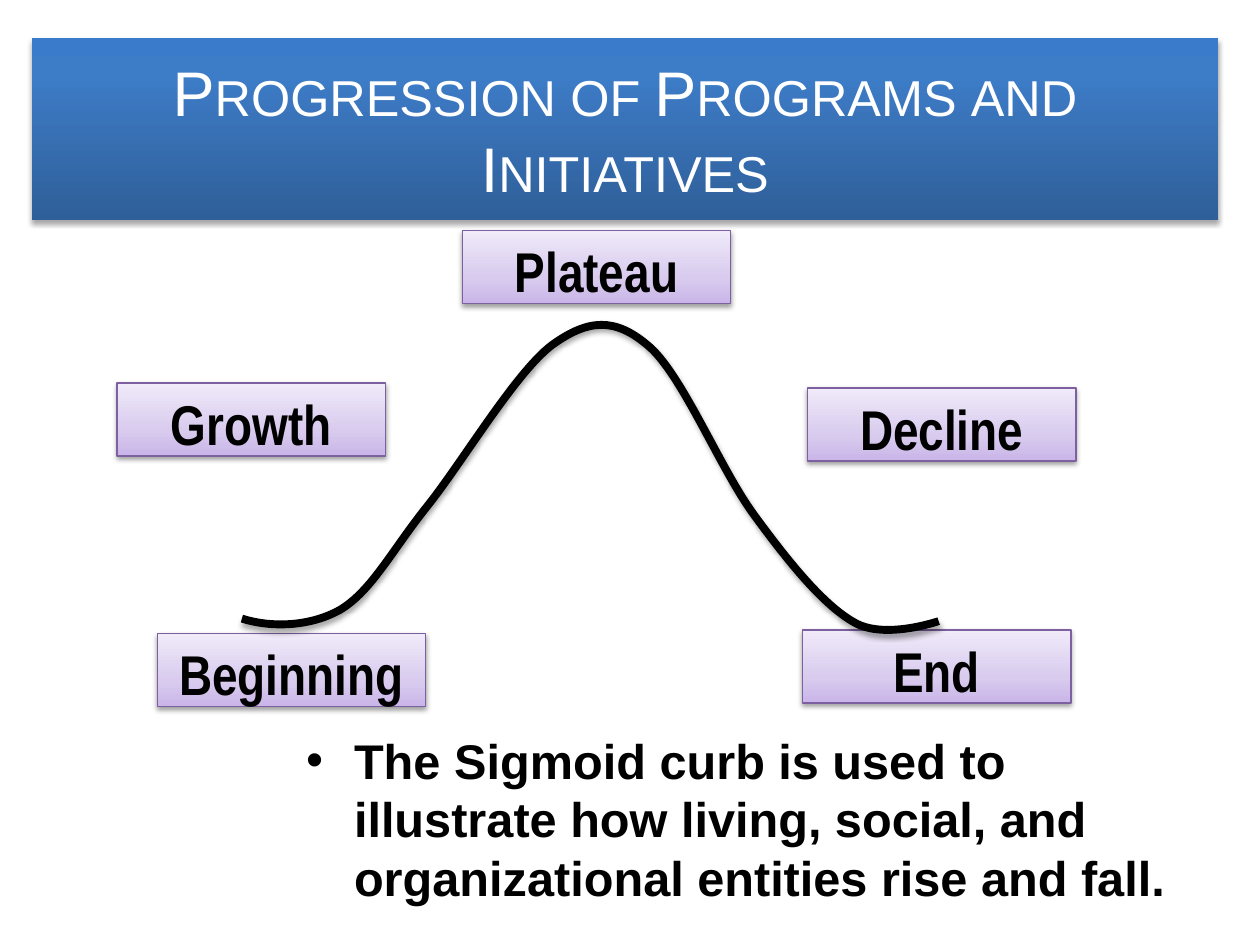
from lxml.etree import SubElement
from pptx import Presentation
from pptx.dml.color import RGBColor
from pptx.enum.shapes import MSO_SHAPE
from pptx.enum.text import MSO_ANCHOR, MSO_AUTO_SIZE, PP_ALIGN
from pptx.oxml.ns import qn
from pptx.util import Inches, Pt

BLACK = RGBColor(0x00, 0x00, 0x00)
WHITE = RGBColor(0xFF, 0xFF, 0xFF)
PURPLE = RGBColor(0x7D, 0x60, 0xA0)
BLUE_STOPS = [(0, RGBColor(0x2F, 0x5F, 0x99)), (80, RGBColor(0x3D, 0x7C, 0xC7)),
              (100, RGBColor(0x3A, 0x7C, 0xCB))]
LILAC_STOPS = [(0, RGBColor(0xC9, 0xB5, 0xE8)), (35, RGBColor(0xD8, 0xCB, 0xEE)),
               (100, RGBColor(0xF0, 0xEA, 0xF9))]

TITLE = "Progression of Programs and Initiatives"
BODY = ("The Sigmoid curb is used to illustrate how living, social, "
        "and organizational entities rise and fall.")
LABEL_SIZE = (2.13, 0.58)
STAGES = [("Growth", 0.93, 3.04), ("Plateau", 3.67, 1.83), ("Decline", 6.41, 3.08),
          ("End", 6.37, 5), ("Beginning", 1.25, 5.03)]
# Start point, then two control points and an end point for each Bézier segment.
CURVE = [(1.92, 4.91),
         (2.14, 4.98), (2.45, 4.98), (2.7, 4.84),
         (2.95, 4.69), (3.11, 4.37), (3.39, 4.02),
         (3.67, 3.67), (4.09, 2.96), (4.38, 2.74),
         (4.67, 2.53), (4.88, 2.52), (5.14, 2.74),
         (5.41, 2.96), (5.71, 3.71), (5.98, 4.08),
         (6.25, 4.45), (6.53, 4.8), (6.78, 4.94),
         (7.02, 5.08), (7.45, 4.93), (7.45, 4.93)]


def place(shape, left, top, width, height):
    shape.left, shape.top = Inches(left), Inches(top)
    shape.width, shape.height = Inches(width), Inches(height)


def fill_upward(shape, stops):
    """Fill with a gradient that runs from the bottom edge to the top."""
    shape.fill.gradient()
    shape.fill.gradient_angle = 90
    stop_list = shape._element.spPr.find(".//" + qn("a:gsLst"))
    stop_list.clear()
    for percent, color in stops:
        stop = SubElement(stop_list, qn("a:gs"), pos=str(percent * 1000))
        SubElement(stop, qn("a:srgbClr"), val=str(color))


def add_shadow(shape, distance, opacity):
    shape.shadow.inherit = False
    effects = shape._element.spPr.find(qn("a:effectLst"))
    shadow = SubElement(effects, qn("a:outerShdw"), blurRad=str(Pt(3.1)),
                        dist=str(Pt(distance)), dir="5400000", rotWithShape="0")
    color = SubElement(shadow, qn("a:srgbClr"), val=str(BLACK))
    SubElement(color, qn("a:alpha"), val=str(opacity * 1000))


def add_text(para, text, font, size, color, bold):
    span = para.add_run()
    span.text = text
    span.font.name, span.font.size = font, Pt(size)
    span.font.bold = bold
    span.font.color.rgb = color
    return span


def write_title(title):
    place(title, 0.25, 0.3, 9.42, 1.45)
    fill_upward(title, BLUE_STOPS)
    add_shadow(title, 1.8, 35)
    frame = title.text_frame
    frame.auto_size = MSO_AUTO_SIZE.NONE
    frame.vertical_anchor = MSO_ANCHOR.MIDDLE
    para = frame.paragraphs[0]
    para.alignment = PP_ALIGN.CENTER
    span = add_text(para, TITLE, "Arial", 36, WHITE, False)
    span.font._element.set("cap", "small")


def write_body(body):
    place(body, 2.33, 5.75, 7.17, 1.5)
    body.text_frame.auto_size = MSO_AUTO_SIZE.NONE
    para = body.text_frame.paragraphs[0]
    para.space_before = Pt(0)
    properties = para._p.get_or_add_pPr()
    properties.set("marL", str(Inches(0.38)))
    properties.set("indent", str(Inches(-0.38)))
    SubElement(properties, qn("a:buFont"), typeface="Arial")
    SubElement(properties, qn("a:buChar"), char="•")
    add_text(para, BODY, "Arial", 27.8, BLACK, True)


def add_label(shapes, text, left, top):
    box = shapes.add_shape(MSO_SHAPE.RECTANGLE, Inches(left), Inches(top),
                           *map(Inches, LABEL_SIZE))
    fill_upward(box, LILAC_STOPS)
    box.line.color.rgb = PURPLE
    box.line.width = Pt(0.75)
    add_shadow(box, 1.6, 38)
    box.text_frame.word_wrap = True
    box.text_frame.vertical_anchor = MSO_ANCHOR.TOP
    para = box.text_frame.paragraphs[0]
    para.alignment = PP_ALIGN.CENTER
    para.space_after = Pt(10)
    add_text(para, text, "Arial Narrow", 32, BLACK, True)


def add_curve(shapes, points):
    """Draw an open path whose points are grouped into cubic Bézier segments."""
    start, *others = [(Inches(x), Inches(y)) for x, y in points]
    builder = shapes.build_freeform(*start)
    builder.add_line_segments(others, close=False)
    curve = builder.convert_to_shape()
    outline = curve._element.spPr.find(".//" + qn("a:path"))
    steps = outline.findall(qn("a:lnTo"))
    for first in range(0, len(steps), 3):
        segment = SubElement(outline, qn("a:cubicBezTo"))
        for step in steps[first:first + 3]:
            segment.append(step[0])
            outline.remove(step)
    curve.fill.background()
    curve.line.color.rgb = BLACK
    curve.line.width = Pt(4.5)
    add_shadow(curve, 1.8, 35)


def main():
    deck = Presentation()
    deck.slide_width, deck.slide_height = Inches(10), Inches(7.5)
    page = deck.slides.add_slide(deck.slide_layouts[1])
    write_title(page.shapes.title)
    write_body(page.placeholders[1])
    diagram = page.shapes.add_group_shape()
    for stage in STAGES:
        add_label(diagram.shapes, *stage)
    add_curve(diagram.shapes, CURVE)
    deck.save("out.pptx")


if __name__ == "__main__":
    main()
